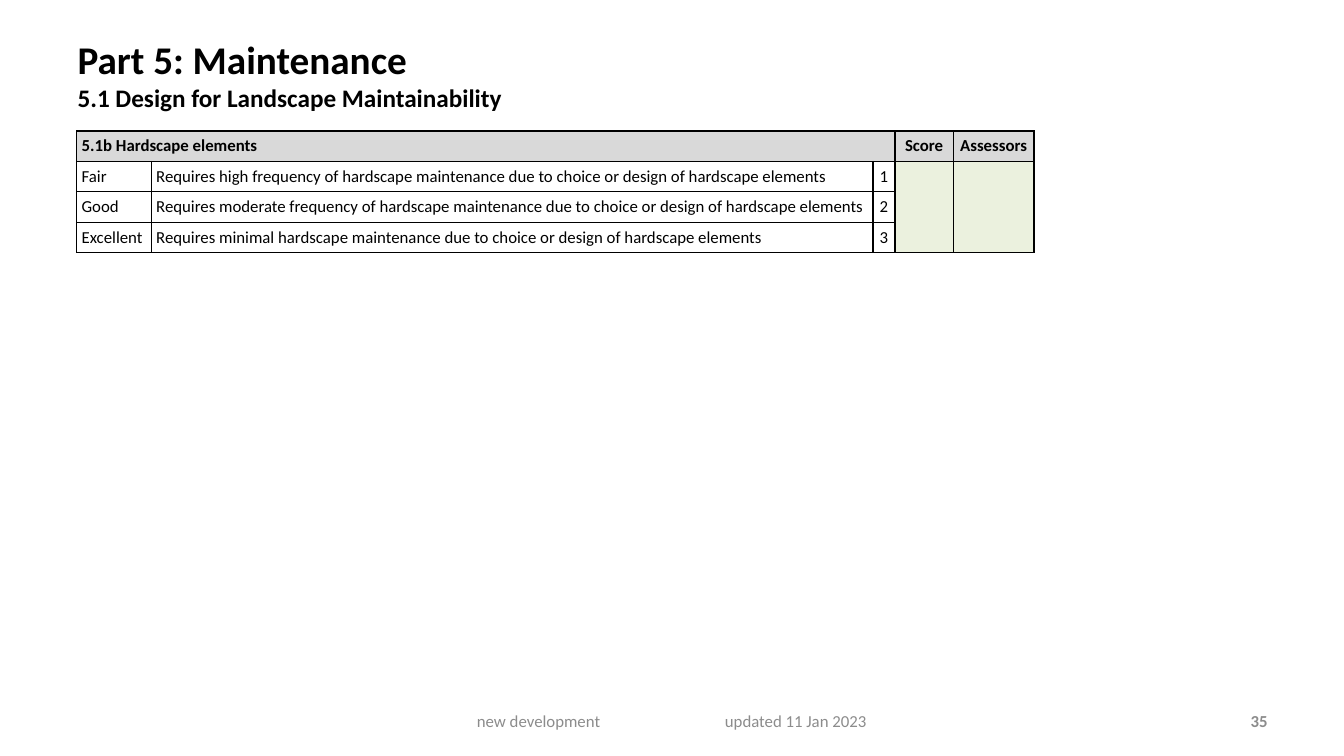
from dataclasses import dataclass

from lxml.etree import SubElement
from pptx import Presentation
from pptx.dml.color import RGBColor as Color
from pptx.enum.text import MSO_ANCHOR as Anchor, PP_ALIGN as Align
from pptx.oxml.ns import qn
from pptx.slide import Slide
from pptx.table import _Cell as Cell
from pptx.text.text import Font
from pptx.util import Inches, Length, Pt


@dataclass(frozen=True)
class Theme:
    font: str = "Calibri"
    ink: Color = Color(0x00, 0x00, 0x00)
    muted: Color = Color(0x8C, 0x8C, 0x8C)
    header_fill: Color = Color(0xD9, 0xD9, 0xD9)
    score_fill: Color = Color(0xEB, 0xF1, 0xDE)
    title_size: Length = Pt(28)
    subtitle_size: Length = Pt(18)
    body_size: Length = Pt(12)
    border: Length = Pt(1)
    cell_margin: Length = Inches(0.05)


@dataclass(frozen=True)
class Box:
    """Place and size in percent of the slide's width and height."""
    left: float
    top: float
    width: float
    height: float


@dataclass(frozen=True)
class Label:
    box: Box
    text: str
    align: Align
    bold: bool = False
    left_inset: Length = Inches(0.1)
    tab_stop: Length | None = None


@dataclass(frozen=True)
class Rating:
    name: str
    description: str
    points: str


THEME = Theme()
SLIDE_WIDTH, SLIDE_HEIGHT = Inches(13.33), Inches(7.5)

TITLE_BOX = Box(5.03, 4, 77.72, 13.2)
TABLE_LEFT, TABLE_TOP, ROW_HEIGHT = 5.7, 17.33, 4.03
COLUMN_WIDTHS = (5.55, 53.71, 1.63, 4.35, 6)
POINTS_COLUMN, SCORE_COLUMN, ASSESSORS_COLUMN = 2, 3, 4

HEADER = ("5.1b Hardscape elements", "", "", "Score", "Assessors")
RATINGS = (
    Rating("Fair", "Requires high frequency of hardscape maintenance due to "
           "choice or design of hardscape elements", "1"),
    Rating("Good", "Requires moderate frequency of hardscape maintenance due to "
           "choice or design of hardscape elements", "2"),
    Rating("Excellent", "Requires minimal hardscape maintenance due to "
           "choice or design of hardscape elements", "3"),
)
FOOTER = (
    Label(Box(34.21, 92.67, 31.66, 5.33), "new development\tupdated 11 Jan 2023",
          Align.LEFT, left_inset=Inches(0.17), tab_stop=Inches(2.46)),
    Label(Box(71.72, 92.67, 23.33, 5.33), "35", Align.RIGHT, bold=True),
)


def across(percent: float) -> Length:
    return Length(round(SLIDE_WIDTH * percent / 100))


def down(percent: float) -> Length:
    return Length(round(SLIDE_HEIGHT * percent / 100))


def style(font: Font, size: Length, color: Color, bold: bool) -> None:
    font.name, font.size, font.bold = THEME.font, size, bold
    font.color.rgb = color


def add_text_frame(slide: Slide, box: Box, anchor: Anchor):
    shape = slide.shapes.add_textbox(across(box.left), down(box.top),
                                     across(box.width), down(box.height))
    frame = shape.text_frame
    frame.word_wrap = True
    frame.vertical_anchor = anchor
    return frame


def add_title(slide: Slide, title: str, subtitle: str) -> None:
    paragraph = add_text_frame(slide, TITLE_BOX, Anchor.TOP).paragraphs[0]
    style(paragraph.font, THEME.title_size, THEME.ink, True)
    paragraph.add_run().text = title
    paragraph.add_line_break()
    subtitle_run = paragraph.add_run()
    subtitle_run.text = subtitle
    subtitle_run.font.size = THEME.subtitle_size


def add_label(slide: Slide, label: Label) -> None:
    frame = add_text_frame(slide, label.box, Anchor.MIDDLE)
    frame.margin_left = label.left_inset
    paragraph = frame.paragraphs[0]
    paragraph.text = label.text
    paragraph.alignment = label.align
    if label.tab_stop is not None:
        tabs = SubElement(paragraph._p.get_or_add_pPr(), qn("a:tabLst"))
        SubElement(tabs, qn("a:tab"), pos=str(label.tab_stop), algn="l")
    style(paragraph.font, THEME.body_size, THEME.muted, label.bold)


def add_borders(cell: Cell) -> None:
    """Outline a cell; call before its fill is set, as lines come first in the XML."""
    properties = cell._tc.get_or_add_tcPr()
    for side in ("lnL", "lnR", "lnT", "lnB"):
        line = SubElement(properties, qn(f"a:{side}"), w=str(THEME.border))
        fill = SubElement(line, qn("a:solidFill"))
        SubElement(fill, qn("a:srgbClr"), val=str(THEME.ink))


def format_cell(cell: Cell, text: str, fill: Color | None, centered: bool,
                bold: bool) -> None:
    add_borders(cell)
    if fill is None:
        cell.fill.background()
    else:
        cell.fill.solid()
        cell.fill.fore_color.rgb = fill
    cell.margin_left = cell.margin_right = THEME.cell_margin
    cell.margin_top = cell.margin_bottom = THEME.cell_margin
    cell.vertical_anchor = Anchor.MIDDLE
    paragraph = cell.text_frame.paragraphs[0]
    paragraph.text = text
    paragraph.alignment = Align.CENTER if centered else Align.LEFT
    style(paragraph.font, THEME.body_size, THEME.ink, bold)


def add_rating_table(slide: Slide) -> None:
    rows = [HEADER] + [(rating.name, rating.description, rating.points, "", "")
                       for rating in RATINGS]
    table = slide.shapes.add_table(
        len(rows), len(COLUMN_WIDTHS), across(TABLE_LEFT), down(TABLE_TOP),
        across(sum(COLUMN_WIDTHS)), down(ROW_HEIGHT * len(rows))).table
    table.first_row = table.horz_banding = False
    for column, width in zip(table.columns, COLUMN_WIDTHS):
        column.width = across(width)
    for row_index, texts in enumerate(rows):
        is_header = row_index == 0
        for column_index, text in enumerate(texts):
            if is_header:
                fill = THEME.header_fill
            else:
                fill = THEME.score_fill if column_index >= SCORE_COLUMN else None
            format_cell(table.cell(row_index, column_index), text, fill,
                        centered=column_index >= POINTS_COLUMN, bold=is_header)
    table.cell(0, 0).merge(table.cell(0, POINTS_COLUMN))
    for column_index in (SCORE_COLUMN, ASSESSORS_COLUMN):
        table.cell(1, column_index).merge(table.cell(len(RATINGS), column_index))


def main() -> None:
    presentation = Presentation()
    presentation.slide_width, presentation.slide_height = SLIDE_WIDTH, SLIDE_HEIGHT
    slide = presentation.slides.add_slide(presentation.slide_layouts[6])
    add_title(slide, "Part 5: Maintenance", "5.1 Design for Landscape Maintainability")
    add_rating_table(slide)
    for label in FOOTER:
        add_label(slide, label)
    presentation.save("out.pptx")


if __name__ == "__main__":
    main()
